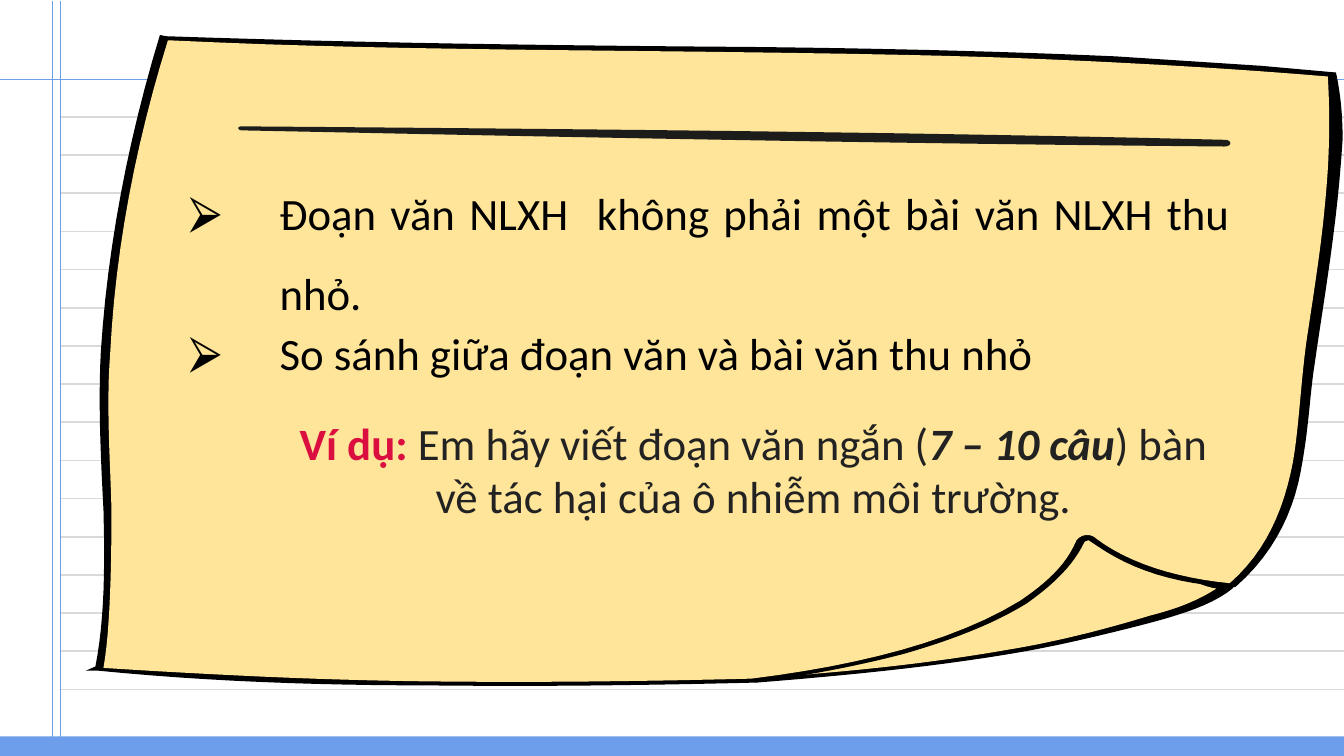
from lxml import etree
from pptx import Presentation
from pptx.dml.color import RGBColor
from pptx.enum.shapes import MSO_CONNECTOR, MSO_SHAPE
from pptx.enum.text import MSO_ANCHOR, MSO_AUTO_SIZE, PP_ALIGN
from pptx.oxml.ns import qn
from pptx.util import Inches, Pt

LINE = MSO_CONNECTOR.STRAIGHT
RECT = MSO_SHAPE.RECTANGLE
TOP = MSO_ANCHOR.TOP
NO_FIT = MSO_AUTO_SIZE.NONE
JUSTIFY, CENTER = PP_ALIGN.JUSTIFY, PP_ALIGN.CENTER
COLORS = {name: RGBColor.from_string(value) for name, value in {
    "rule": "D9D9D9", "blue": "6D9EEB", "paper": "FFE599", "ink": "000000",
    "stroke": "1C1C1B", "label": "DA0F3F", "text": "222222"}.items()}
W = 10
H = W * 9 / 16

prs = Presentation()
prs.slide_width, prs.slide_height = Inches(W), Inches(H)
s = prs.slides.add_slide(prs.slide_layouts[3])
title, *lists = s.placeholders
title._element.getparent().remove(title._element)


def add_outline(color, start, segments):
    """Fill a closed outline; a segment is a line end (2 numbers) or a cubic curve (6)."""
    points, (x, y) = [], start
    for seg in segments:
        if len(seg) == 2:
            points.append(seg)
        else:
            x1, y1, x2, y2, x3, y3 = seg
            for t in (i / 12 for i in range(1, 13)):
                a, b, c, d = (1 - t) ** 3, 3 * t * (1 - t) ** 2, 3 * t * t * (1 - t), t ** 3
                points.append((a * x + b * x1 + c * x2 + d * x3,
                               a * y + b * y1 + c * y2 + d * y3))
        x, y = seg[-2:]
    fb = s.shapes.build_freeform(Inches(start[0]), Inches(start[1]), scale=1.0)
    fb.add_line_segments([(Inches(px), Inches(py)) for px, py in points], close=True)
    sp = fb.convert_to_shape()
    sp.shadow.inherit = False
    sp.fill.solid()
    sp.fill.fore_color.rgb = COLORS[color]
    sp.line.fill.background()


def format_run(r, color, bold=False, italic=False):
    r.font.name, r.font.size = "Calibri", Pt(24)
    r.font.bold, r.font.italic = bold, italic
    r.font.color.rgb = COLORS[color]


# Ruled notebook page: 16 rows, two margin lines, one header line
rows = [0.87 + 0.284 * i for i in range(16)]
lines = [(0.45, y, W, y, "rule", 0.86) for y in rows]
lines += [(x, 0.01, x, H, "blue", 0.75) for x in (0.39, 0.45)]
lines.append((-0.07, 0.59, W + 0.07, 0.59, "blue", 0.75))
for x1, y1, x2, y2, color, width in lines:
    c = s.shapes.add_connector(LINE, Inches(x1), Inches(y1), Inches(x2), Inches(y2))
    c.line.color.rgb, c.line.width = COLORS[color], Pt(width)
    etree.SubElement(c._element.spPr, qn("a:effectLst"))

bar = s.shapes.add_shape(RECT, Inches(-0.02), Inches(5.48), Inches(W + 0.02), Inches(0.17))
bar.shadow.inherit = False
bar.fill.solid()
bar.fill.fore_color.rgb = COLORS["blue"]
bar.line.fill.background()

# Sticky note: each ink outline lies under a slightly smaller paper outline
add_outline("ink", (8.03, 3.93), [
    (7.94, 3.94, 7.89, 4.05, 7.8, 4.15), (7.72, 4.24, 7.62, 4.3, 7.6, 4.31),
    (7.43, 4.43, 7.23, 4.53, 7.03, 4.62), (6.59, 4.81, 6.11, 4.95, 5.61, 5.04),
    (5.59, 5.05, 5.59, 5.07, 5.62, 5.08), (6.25, 5.03, 6.88, 4.97, 7.49, 4.87),
    (7.8, 4.82, 8.1, 4.75, 8.38, 4.68), (8.7, 4.6, 9, 4.52, 9.17, 4.38),
    (9.19, 4.36, 9.17, 4.34, 9.14, 4.34), (8.98, 4.32, 8.88, 4.25, 8.7, 4.2),
    (8.54, 4.14), (8.06, 3.93)])
add_outline("paper", (8.03, 3.97), [
    (8.33, 4.1), (8.67, 4.24), (8.8, 4.28, 8.92, 4.36, 9.05, 4.38),
    (8.94, 4.45, 8.8, 4.52, 8.56, 4.58), (8.2, 4.69, 7.84, 4.78, 7.47, 4.84),
    (6.95, 4.93, 6.4, 4.99, 5.86, 5.03), (6.29, 4.94, 6.7, 4.81, 7.07, 4.65),
    (7.28, 4.56, 7.48, 4.45, 7.65, 4.34), (7.74, 4.28, 7.81, 4.23, 7.87, 4.16),
    (7.93, 4.1, 7.98, 4, 8.03, 3.97)])
add_outline("ink", (1.19, 0.26), [
    (0.95, 1.05, 0.8, 1.84, 0.75, 2.62), (0.73, 3.02, 0.75, 3.41, 0.77, 3.8),
    (0.78, 4.2, 0.78, 4.6, 0.71, 4.96), (0.64, 4.99), (0.72, 4.99),
    (1.53, 5.07, 2.35, 5.1, 3.16, 5.1), (3.97, 5.11, 4.79, 5.1, 5.6, 5.08),
    (5.99, 5.03, 6.36, 4.96, 6.71, 4.87), (7.06, 4.77, 7.38, 4.65, 7.64, 4.49),
    (7.85, 4.34, 7.99, 4.2, 8.07, 4.03), (8.1, 4.02), (8.16, 4.06),
    (8.42, 4.24, 8.75, 4.35, 9.19, 4.37), (9.51, 4.09, 9.64, 3.76, 9.69, 3.44),
    (9.74, 3.16, 9.75, 2.9, 9.78, 2.72), (9.86, 2.16, 9.95, 1.68, 9.99, 1.03),
    (9.99, 0.85, 9.97, 0.67, 9.94, 0.54), (9.38, 0.49), (8.3, 0.42),
    (7.4, 0.38, 6.5, 0.36, 5.58, 0.35), (4.13, 0.34, 2.68, 0.32, 1.23, 0.27)])
add_outline("paper", (1.25, 0.3), [
    (2.69, 0.37, 4.13, 0.37, 5.58, 0.39), (6.3, 0.4, 7.03, 0.41, 7.75, 0.44),
    (8.46, 0.47, 9.17, 0.51, 9.88, 0.57), (9.9, 0.9, 9.89, 1.2, 9.86, 1.51),
    (9.83, 1.84, 9.78, 2.15, 9.73, 2.48), (9.68, 2.8, 9.67, 3.15, 9.62, 3.44),
    (9.55, 3.8, 9.42, 4.1, 9.15, 4.34), (8.75, 4.3, 8.4, 4.19, 8.16, 4.01),
    (8.12, 3.97, 8.05, 3.97, 8.01, 4.02), (7.93, 4.21, 7.78, 4.34, 7.59, 4.47),
    (7.1, 4.77, 6.4, 4.95, 5.59, 5.05), (4.79, 5.07, 3.97, 5.08, 3.16, 5.07),
    (2.35, 5.06, 1.55, 5.02, 0.77, 4.97), (0.82, 4.7, 0.83, 4.2, 0.83, 3.8),
    (0.82, 3.41, 0.79, 3.02, 0.82, 2.63), (0.86, 1.85, 1.01, 1.07, 1.25, 0.3)])
add_outline("stroke", (1.8, 0.94), [
    (1.76, 0.94, 1.77, 0.97, 1.8, 0.97), (4.23, 1.02, 6.67, 1.07, 9.11, 1.09),
    (9.17, 1.09, 9.17, 1.04, 9.11, 1.04), (6.67, 0.98, 4.23, 0.96, 1.8, 0.94)])

# Bulleted points, brought in front of the note
points = [("Đoạn văn NLXH  không phải một bài văn NLXH thu nhỏ.", 1.11, 8, 1.35, 1.5),
          ("So sánh giữa đoạn văn và bài văn thu nhỏ", 2.35, 7.18, 0.54, 1)]
for sp, (text, top, width, height, spacing) in zip(lists, points):
    s.shapes._spTree.append(sp._element)
    sp.left, sp.top, sp.width, sp.height = map(Inches, (1.28, top, width, height))
    tf = sp.text_frame
    tf.text = text
    tf.auto_size, tf.vertical_anchor, tf.word_wrap = NO_FIT, TOP, True
    tf.margin_left = tf.margin_right = Inches(0.13)
    tf.margin_top = tf.margin_bottom = Inches(0.07)
    p = tf.paragraphs[0]
    p.alignment, p.line_spacing, p.space_before = JUSTIFY, spacing, Pt(0)
    pPr = p._p.get_or_add_pPr()
    pPr.set("marL", str(Inches(0.67)))
    pPr.set("indent", str(-Inches(0.67)))
    bu_color = etree.SubElement(pPr, qn("a:buClr"))
    etree.SubElement(bu_color, qn("a:srgbClr"), val=str(COLORS["ink"]))
    etree.SubElement(pPr, qn("a:buChar"), char="⮚")
    format_run(p.runs[0], "ink")

# Example
example = s.shapes.add_textbox(Inches(2.03), Inches(3.04), Inches(7.15), Inches(0.91))
tf = example.text_frame
tf.word_wrap = True
p = tf.paragraphs[0]
p.alignment = CENTER
for text, color, bold, italic in [
        ("Ví dụ: ", "label", True, False),
        ("Em hãy viết đoạn văn ngắn (", "text", False, False),
        ("7 – 10 câu", "text", True, True),
        (") bàn về tác hại của ô nhiễm môi trường.", "text", False, False)]:
    r = p.add_run()
    r.text = text
    format_run(r, color, bold, italic)

prs.save("out.pptx")
